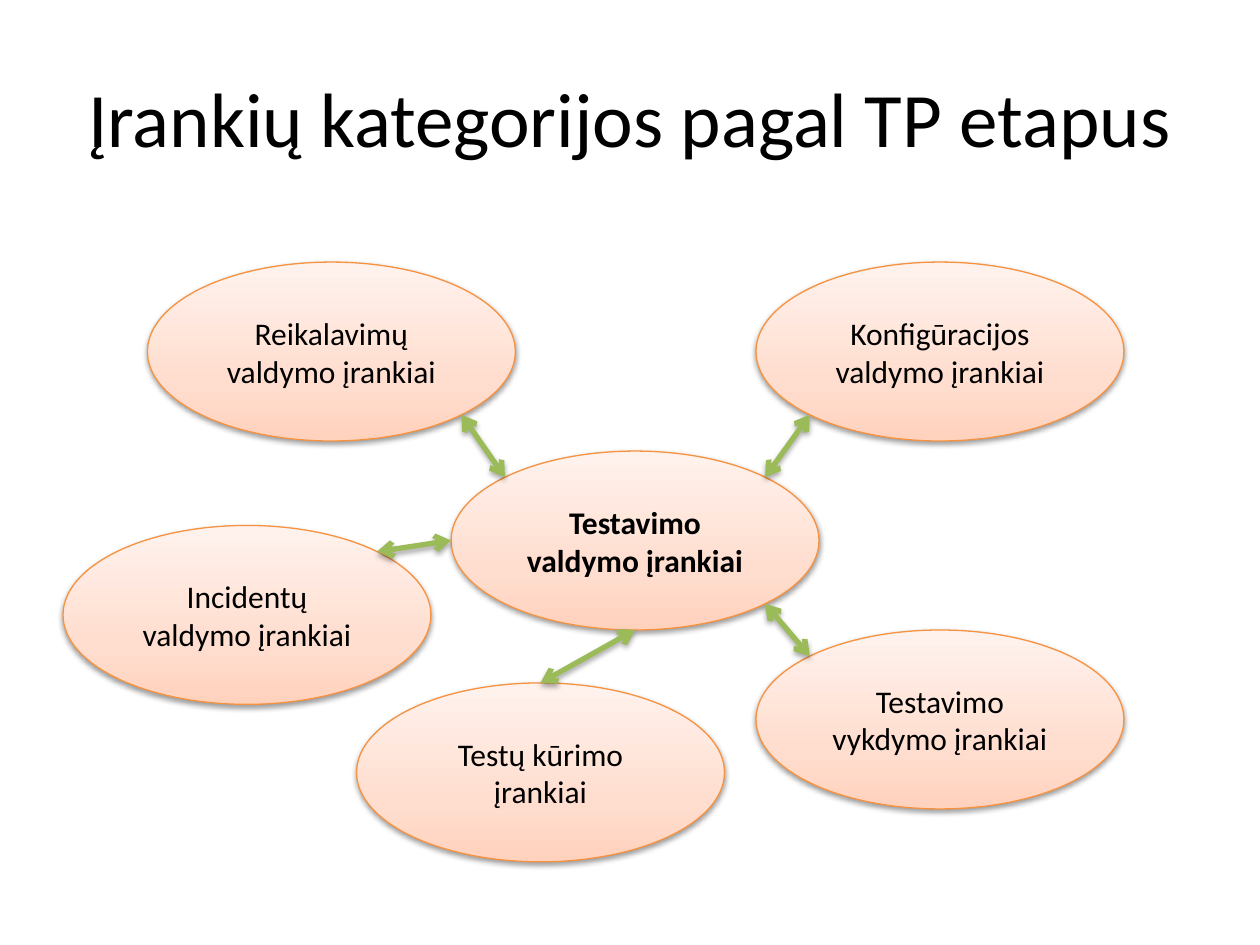
from math import cos, pi, sin

from lxml import etree
from pptx import Presentation
from pptx.dml.color import RGBColor
from pptx.enum.shapes import MSO_CONNECTOR, MSO_SHAPE
from pptx.enum.text import MSO_ANCHOR, PP_ALIGN
from pptx.oxml.ns import qn
from pptx.util import Inches, Pt

OVAL = MSO_SHAPE.OVAL
STRAIGHT = MSO_CONNECTOR.STRAIGHT
MIDDLE = MSO_ANCHOR.MIDDLE
CENTER = PP_ALIGN.CENTER

# Connection sites of an ellipse run anticlockwise from the top, 45° apart.
TOP, TOP_LEFT, LEFT, BOTTOM_LEFT, BOTTOM, BOTTOM_RIGHT, RIGHT, TOP_RIGHT = range(8)


def rgb(value):
    return RGBColor.from_string(value)


def add_xml(parent, tag, **attributes):
    return etree.SubElement(parent, qn(tag), **{k: str(v) for k, v in attributes.items()})


def site_point(oval, site):
    """Return the x and y of a connection site on an ellipse."""
    angle = pi / 2 + site * pi / 4
    x = oval.left + oval.width / 2 * (1 + cos(angle))
    y = oval.top + oval.height / 2 * (1 - sin(angle))
    return round(x), round(y)


class DiagramSlide:
    font = "Calibri"
    text_color = "000000"
    outline = "F69240"
    arrow_color = "9BBB59"
    gradient = [(0, "FFD2BD"), (35, "FFDED0"), (100, "FFF2ED")]
    oval_size = (2.92, 1.42)

    def __init__(self, slide):
        self.slide = slide

    def set_text(self, shape, text, size, bold=False):
        frame = shape.text_frame
        frame.word_wrap = True
        frame.vertical_anchor = MIDDLE
        frame.text = text
        paragraph = frame.paragraphs[0]
        paragraph.alignment = CENTER
        font = paragraph.runs[0].font
        font.name, font.size, font.bold = self.font, Pt(size), bold
        font.color.rgb = rgb(self.text_color)

    def title(self, text, left, top, width, height):
        box = self.slide.shapes.add_textbox(
            Inches(left), Inches(top), Inches(width), Inches(height))
        self.set_text(box, text, 44)

    def fill_gradient(self, shape):
        shape.fill.gradient()
        shape.fill.gradient_angle = 90
        stops = shape._element.spPr.find(qn("a:gradFill")).find(qn("a:gsLst"))
        stops.clear()
        for position, color in self.gradient:
            stop = add_xml(stops, "a:gs", pos=position * 1000)
            add_xml(stop, "a:srgbClr", val=color)

    def add_shadow(self, effects, distance, opacity):
        shadow = add_xml(effects, "a:outerShdw", blurRad=int(Pt(3.1)), dist=int(Pt(distance)),
                         dir=90 * 60000, rotWithShape=0)
        color = add_xml(shadow, "a:srgbClr", val="000000")
        add_xml(color, "a:alpha", val=opacity * 1000)

    def oval(self, text, left, top, bold=False):
        width, height = self.oval_size
        oval = self.slide.shapes.add_shape(
            OVAL, Inches(left), Inches(top), Inches(width), Inches(height))
        self.fill_gradient(oval)
        oval.line.color.rgb = rgb(self.outline)
        oval.line.width = Pt(0.75)
        oval.shadow.inherit = False
        self.add_shadow(oval._element.spPr.find(qn("a:effectLst")), 1.6, 38)
        self.set_text(oval, text, 18, bold)
        return oval

    def double_arrow(self, start, start_site, end, end_site):
        """Join two ellipses at the given connection sites."""
        arrow = self.slide.shapes.add_connector(
            STRAIGHT, *site_point(start, start_site), *site_point(end, end_site))
        arrow.line.color.rgb = rgb(self.arrow_color)
        arrow.line.width = Pt(3)
        properties = arrow._element.spPr
        for tag in ("a:headEnd", "a:tailEnd"):
            add_xml(properties.find(qn("a:ln")), tag, type="arrow")
        self.add_shadow(add_xml(properties, "a:effectLst"), 1.8, 35)
        joints = arrow._element.nvCxnSpPr.cNvCxnSpPr
        add_xml(joints, "a:stCxn", id=start.shape_id, idx=start_site)
        add_xml(joints, "a:endCxn", id=end.shape_id, idx=end_site)


def main():
    presentation = Presentation()
    presentation.slide_width, presentation.slide_height = Inches(10), Inches(7.5)
    diagram = DiagramSlide(presentation.slides.add_slide(presentation.slide_layouts[6]))

    diagram.title("Įrankių kategorijos pagal TP etapus", 0.5, 0.3, 9, 1.25)
    management = diagram.oval("Testavimo valdymo įrankiai", 3.58, 3.58, bold=True)
    # text, left, top, site on the central ellipse, site on this ellipse
    categories = [
        ("Testavimo vykdymo įrankiai", 6, 5, BOTTOM_RIGHT, TOP_LEFT),
        ("Konfigūracijos valdymo įrankiai", 6, 2.08, TOP_RIGHT, BOTTOM_LEFT),
        ("Incidentų valdymo įrankiai", 0.5, 4.17, LEFT, TOP_RIGHT),
        ("Reikalavimų valdymo įrankiai", 1.17, 2.08, TOP_LEFT, BOTTOM_RIGHT),
        ("Testų kūrimo įrankiai", 2.83, 5.42, BOTTOM, TOP),
    ]
    for text, left, top, central_site, own_site in categories:
        category = diagram.oval(text, left, top)
        diagram.double_arrow(management, central_site, category, own_site)

    presentation.save("out.pptx")


if __name__ == "__main__":
    main()
